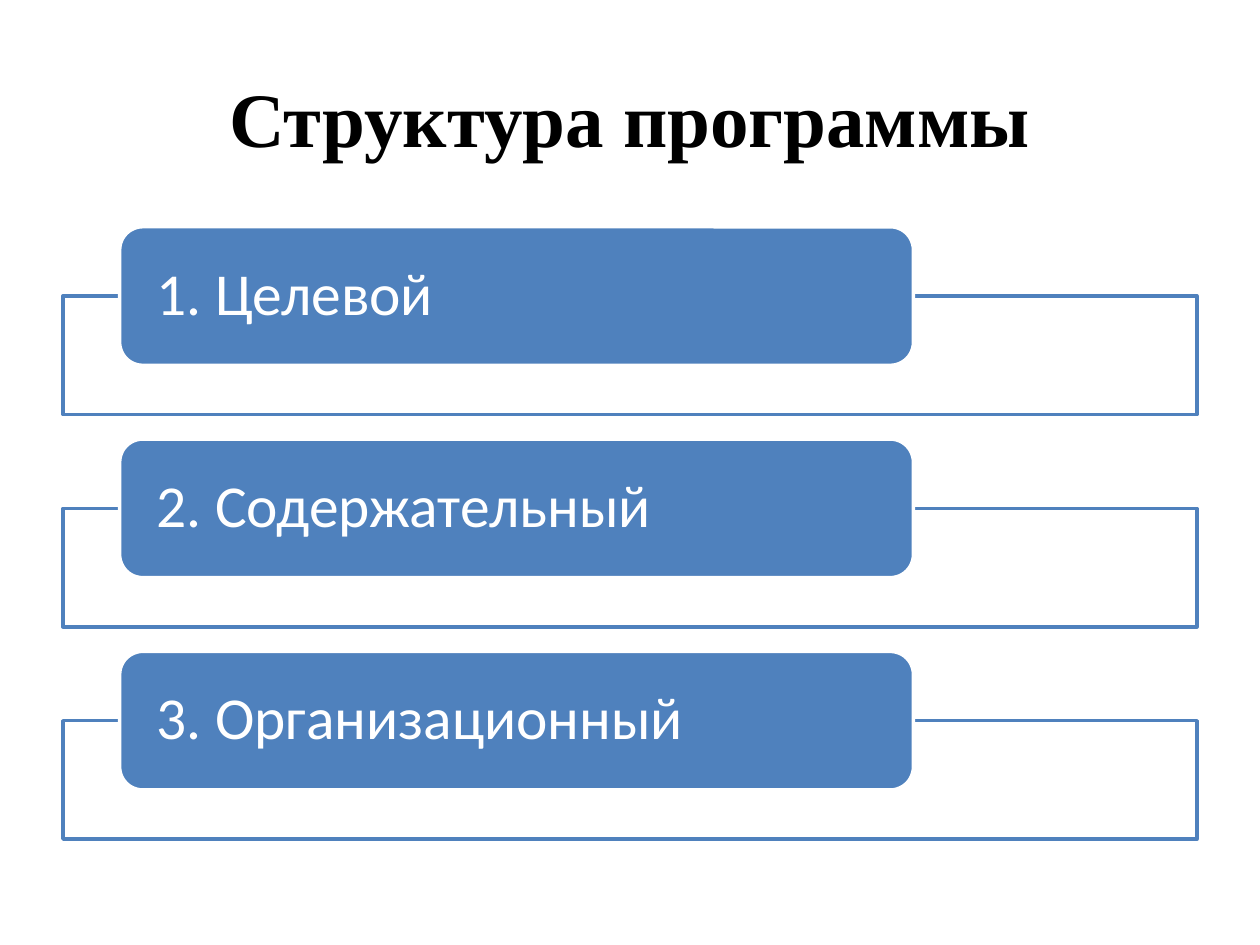
from dataclasses import dataclass

import pptx
import pptx.dml.color
import pptx.enum.shapes
import pptx.enum.text
import pptx.oxml.ns
import pptx.util
from lxml import etree
from pptx.util import Inches


@dataclass(frozen=True)
class Theme:
    accent: str = "4F81BD"
    light: str = "FFFFFF"
    dark: str = "000000"
    title_font: str = "Times New Roman"
    body_font: str = "Calibri"
    title_size: int = 44
    body_size: int = 34
    line_width: int = 2


@dataclass(frozen=True)
class Box:
    left: float
    top: float
    width: float
    height: float

    def lengths(self) -> tuple:
        return tuple(Inches(value) for value in (self.left, self.top, self.width, self.height))


THEME = Theme()
TITLE_BOX = Box(0.5, 0.3, 9, 1.25)
SECTIONS = ("1. Целевой", "2. Содержательный", "3. Организационный")
FIRST_TOP, LAST_TOP = 1.8, 5.17
PITCH = (LAST_TOP - FIRST_TOP) / (len(SECTIONS) - 1)
LABEL_HEIGHT = 1.1


def color(value: str) -> pptx.dml.color.RGBColor:
    return pptx.dml.color.RGBColor.from_string(value)


def write_text(shape, text: str, *, font: str, size: int, text_color: str,
               bold: bool = False, align=pptx.enum.text.PP_ALIGN.LEFT,
               side_margin: float = 0.1, line_spacing: float = 1.0) -> None:
    frame = shape.text_frame
    frame.word_wrap = True
    frame.auto_size = pptx.enum.text.MSO_AUTO_SIZE.NONE
    frame.vertical_anchor = pptx.enum.text.MSO_ANCHOR.MIDDLE
    frame.margin_left = frame.margin_right = Inches(side_margin)
    frame.margin_top = frame.margin_bottom = 0
    paragraph = frame.paragraphs[0]
    paragraph.alignment = align
    paragraph.line_spacing = line_spacing
    run = paragraph.add_run()
    run.text = text
    run.font.name = font
    run.font.size = pptx.util.Pt(size)
    run.font.bold = bold
    run.font.color.rgb = color(text_color)


def add_box(shapes, kind, box: Box, fill: str, line: str):
    shape = shapes.add_shape(kind, *box.lengths())
    shape.shadow.inherit = False
    shape.fill.solid()
    shape.fill.fore_color.rgb = color(fill)
    shape.line.color.rgb = color(line)
    shape.line.width = pptx.util.Pt(THEME.line_width)
    return shape


def set_fill_opacity(shape, percent: int) -> None:
    fill_color = shape.fill._xPr.find(".//" + pptx.oxml.ns.qn("a:srgbClr"))
    alpha = etree.SubElement(fill_color, pptx.oxml.ns.qn("a:alpha"))
    alpha.set("val", str(percent * 1000))


def add_section(shapes, text: str, top: float) -> None:
    """Draw an outlined panel whose top edge runs behind the middle of its label."""
    kinds = pptx.enum.shapes.MSO_SHAPE
    panel_box = Box(0.5, top + LABEL_HEIGHT / 2, 9, 0.94)
    panel = add_box(shapes, kinds.RECTANGLE, panel_box, THEME.light, THEME.accent)
    set_fill_opacity(panel, 90)
    label_box = Box(0.95, top, 6.3, LABEL_HEIGHT)
    label = add_box(shapes, kinds.ROUNDED_RECTANGLE, label_box, THEME.accent, THEME.light)
    write_text(label, text, font=THEME.body_font, size=THEME.body_size,
               text_color=THEME.light, side_margin=0.24, line_spacing=0.9)


def main() -> None:
    presentation = pptx.Presentation()
    presentation.slide_width, presentation.slide_height = Inches(10), Inches(7.5)
    slide = presentation.slides.add_slide(presentation.slide_layouts[5])
    title = slide.shapes.title
    title.left, title.top, title.width, title.height = TITLE_BOX.lengths()
    write_text(title, "Структура программы", font=THEME.title_font, size=THEME.title_size,
               text_color=THEME.dark, bold=True, align=pptx.enum.text.PP_ALIGN.CENTER)
    diagram = slide.shapes.add_group_shape()
    for index, text in enumerate(SECTIONS):
        add_section(diagram.shapes, text, FIRST_TOP + index * PITCH)
    presentation.save("out.pptx")


if __name__ == "__main__":
    main()
